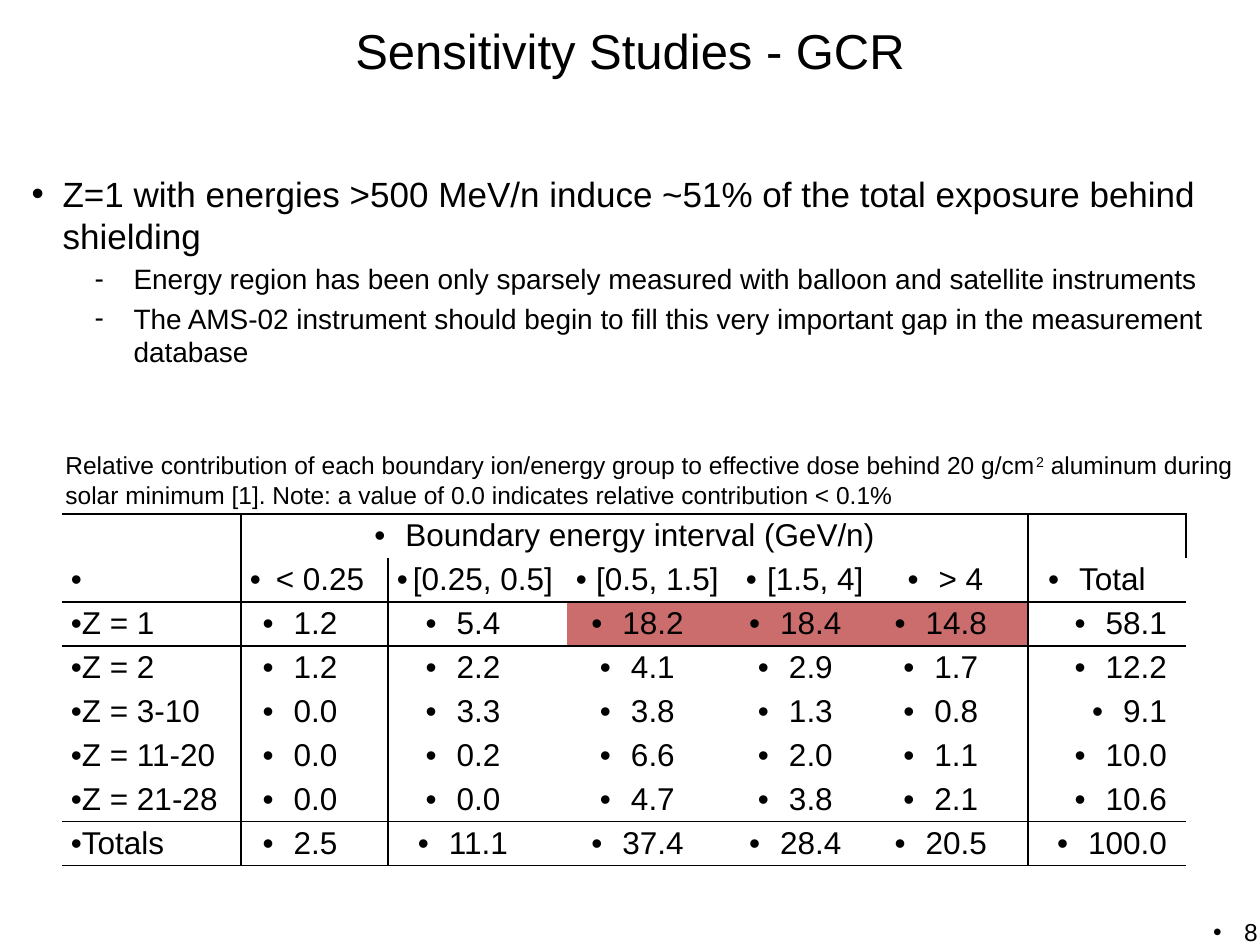
"""Build the GCR sensitivity slide with its dose contribution table."""
from lxml.etree import SubElement
from pptx import Presentation
from pptx.dml.color import RGBColor
from pptx.enum.text import MSO_ANCHOR as Anchor, MSO_AUTO_SIZE as AutoSize, PP_ALIGN as Align
from pptx.oxml.ns import qn
from pptx.util import Emu, Pt

hex_color = RGBColor.from_string
BLACK = "000000"
HIGHLIGHT = "CB6D6D"


def px(count):
    return Emu(round(count * 914400 / 126))


def format_paragraph(para, size, align=Align.LEFT, bullet=None, margin=0, indent=0, before=0):
    properties = para._p.get_or_add_pPr()
    properties.set("marL", str(px(margin)))
    properties.set("indent", str(px(indent)))
    if bullet:
        SubElement(properties, qn("a:buFont"), typeface="Arial")
        SubElement(properties, qn("a:buChar"), char=bullet)
    else:
        SubElement(properties, qn("a:buNone"))
    para.alignment = align
    para.space_before = Pt(before)
    para.font.size = Pt(size)
    para.font.name = "Arial"
    para.font.color.rgb = hex_color(BLACK)


deck = Presentation()
deck.slide_width, deck.slide_height = px(1260), px(945)
page = deck.slides.add_slide(deck.slide_layouts[1])

title = page.shapes.title
title.left, title.top, title.width, title.height = px(0), px(14), px(1260), px(72)
title.text_frame.text = "Sensitivity Studies - GCR"
title.text_frame.auto_size = AutoSize.NONE
title.text_frame.vertical_anchor = Anchor.MIDDLE
format_paragraph(title.text_frame.paragraphs[0], 28, Align.CENTER)

body = page.placeholders[1]
body.left, body.top, body.width, body.height = px(19), px(166), px(1221), px(253)
body.text_frame.auto_size = AutoSize.NONE
points = [
    (0, "Z=1 with energies >500 MeV/n induce ~51% of the total exposure behind shielding"),
    (1, "Energy region has been only sparsely measured with balloon and satellite instruments"),
    (1, "The AMS-02 instrument should begin to fill this very important gap in the measurement database"),
]
body.text_frame.text = "\n".join(text for level, text in points)
for para, (level, text) in zip(body.text_frame.paragraphs, points):
    para.level = level
    if level:
        format_paragraph(para, 16, bullet="-", margin=102, indent=-39, before=3.2)
    else:
        format_paragraph(para, 20, bullet="•", margin=31, indent=-31)

rows = [
    ["", "Boundary energy interval (GeV/n)", "", "", "", "", ""],
    [" ", "< 0.25", "[0.25, 0.5]", "[0.5, 1.5]", "[1.5, 4]", "> 4", "Total"],
    ["Z = 1", "1.2", "5.4", "18.2", "18.4", "14.8", "58.1"],
    ["Z = 2", "1.2", "2.2", "4.1", "2.9", "1.7", "12.2"],
    ["Z = 3-10", "0.0", "3.3", "3.8", "1.3", "0.8", "9.1"],
    ["Z = 11-20", "0.0", "0.2", "6.6", "2.0", "1.1", "10.0"],
    ["Z = 21-28", "0.0", "0.0", "4.7", "3.8", "2.1", "10.6"],
    ["Totals", "2.5", "11.1", "37.4", "28.4", "20.5", "100.0"],
]
column_widths = [179, 147, 179, 170, 146, 145, 158]
ruled_rows = {0, 2, 3, 7, 8}
table = page.shapes.add_table(
    len(rows), len(column_widths), px(62), px(514), px(sum(column_widths)), px(44 * len(rows))
).table
table.first_row = table.horz_banding = False
for column, width in zip(table.columns, column_widths):
    column.width = px(width)
for row in table.rows:
    row.height = px(44)
table.cell(0, 1).merge(table.cell(0, 5))

for r, values in enumerate(rows):
    ruled_columns = {1, 6, 7} if r == 0 else {1, 2, 6}
    for c, value in enumerate(values):
        cell = table.cell(r, c)
        is_number = r > 1 and c > 0
        cell.margin_left, cell.margin_right = (px(10), px(19)) if is_number else (px(9), px(9))
        cell.margin_top = cell.margin_bottom = px(0)
        cell.vertical_anchor = Anchor.MIDDLE
        if value:
            cell.text = value
        para = cell.text_frame.paragraphs[0]
        if c == 0:
            align = Align.LEFT
        else:
            align = Align.RIGHT if is_number and c == 6 else Align.CENTER
        format_paragraph(para, 18, align, bullet="•" if value else None, indent=-31 if c else 0)

        edges = {
            "L": c in ruled_columns,
            "R": c + 1 in ruled_columns,
            "T": r in ruled_rows,
            "B": r + 1 in ruled_rows,
        }
        for side, ruled in edges.items():
            line = SubElement(cell._tc.get_or_add_tcPr(), qn(f"a:ln{side}"), w=str(Pt(1)))
            if ruled:
                SubElement(SubElement(line, qn("a:solidFill")), qn("a:srgbClr"), val=BLACK)
            else:
                SubElement(line, qn("a:noFill"))
        if r == 2 and 3 <= c <= 5:
            cell.fill.solid()
            cell.fill.fore_color.rgb = hex_color(HIGHLIGHT)
        else:
            cell.fill.background()

caption = page.shapes.add_textbox(px(53), px(444), px(1197), px(72))
caption.text_frame.word_wrap = True
para = caption.text_frame.paragraphs[0]
format_paragraph(para, 14)
for text, baseline in [
    ("Relative contribution of each boundary ion/energy group to effective dose behind 20 g/cm", 0),
    ("2", 30000),
    (" aluminum during solar minimum [1]. Note: a value of 0.0 indicates relative contribution < 0.1%", 0),
]:
    span = para.add_run()
    span.text = text
    if baseline:
        span._r.get_or_add_rPr().set("baseline", str(baseline))

number = page.shapes.add_textbox(px(977), px(911), px(293), px(65))
number.text_frame.word_wrap = True
number.text_frame.text = "8"
format_paragraph(number.text_frame.paragraphs[0], 14, Align.RIGHT, bullet="•", indent=-31)

deck.save("out.pptx")
